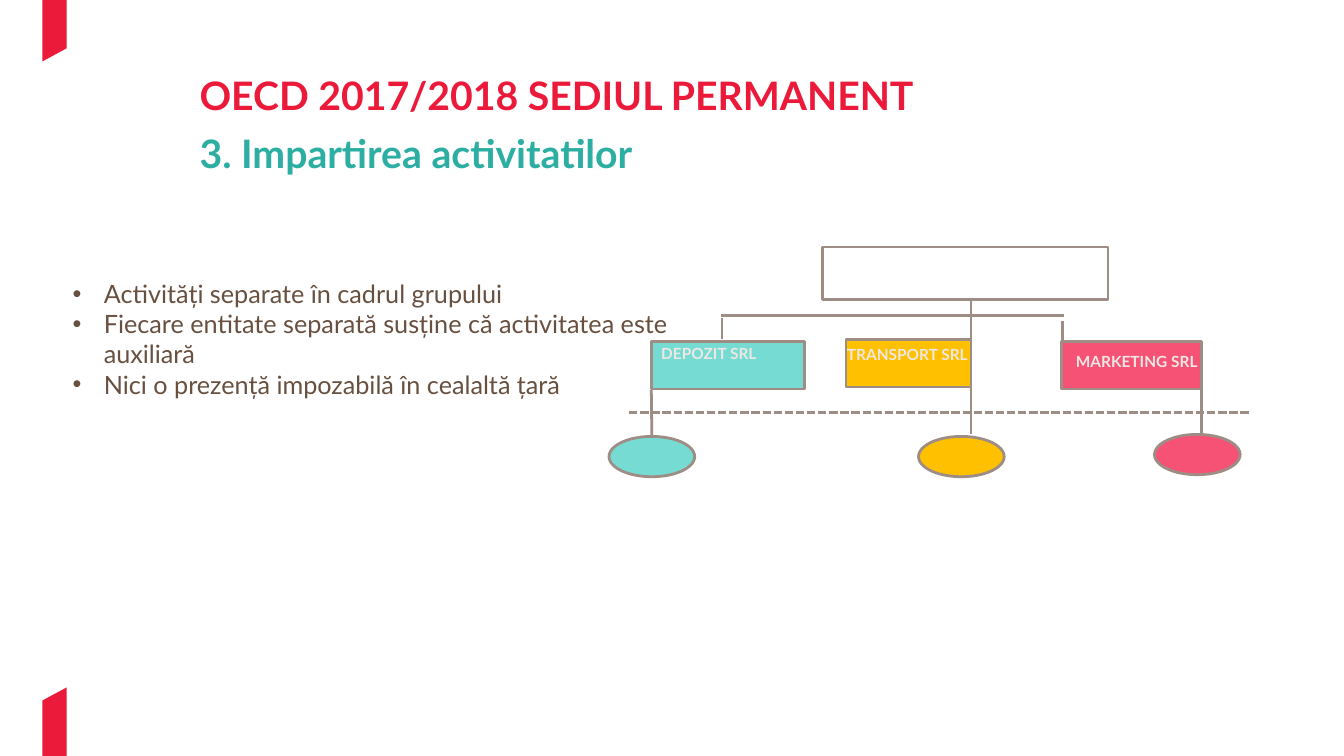
from pptx import Presentation
from pptx.dml.color import RGBColor
from pptx.enum.dml import MSO_LINE
from pptx.enum.shapes import MSO_CONNECTOR, MSO_SHAPE
from pptx.enum.text import MSO_ANCHOR, MSO_AUTO_SIZE, PP_ALIGN
from pptx.oxml.ns import qn
from pptx.util import Inches, Pt

RECTANGLE, OVAL = MSO_SHAPE.RECTANGLE, MSO_SHAPE.OVAL
STRAIGHT, DASH = MSO_CONNECTOR.STRAIGHT, MSO_LINE.SQUARE_DOT
TOP, LEFT, NO_FIT = MSO_ANCHOR.TOP, PP_ALIGN.LEFT, MSO_AUTO_SIZE.NONE

COLORS = {
    "red": "EC1A3A",
    "teal": "2DAEA3",
    "brown": "685040",
    "outline": "9D8D85",
    "label": "EDE8E4",
    "aqua": "76DBD2",
    "amber": "FFC000",
    "pink": "F65275",
}
HEADING = {"size": Pt(28), "bold": True}
BODY = {"size": Pt(18), "bold": False}
LABEL = {"size": Pt(11), "bold": True}


def color(name):
    return RGBColor.from_string(COLORS[name])


def add_bullet(paragraph):
    properties = paragraph._p.get_or_add_pPr()
    properties.set("marL", str(Inches(0.33)))
    properties.set("indent", str(Inches(-0.31)))
    properties.append(properties.makeelement(qn("a:buChar"), {"char": "•"}))


class SlideBuilder:
    font_name = "Lato"
    line_width = Pt(1.98)

    def __init__(self, slide):
        self.slide = slide
        self.shapes = slide.shapes

    def set_text(self, shape, lines, style, color_name, inset=(0, 0), bulleted=False):
        """Fill a shape with left-aligned paragraphs; inset is left, top in inches."""
        frame = shape.text_frame
        settings = {
            "word_wrap": True, "auto_size": NO_FIT, "vertical_anchor": TOP,
            "margin_left": Inches(inset[0]), "margin_top": Inches(inset[1]),
            "margin_right": 0, "margin_bottom": 0,
        }
        for key, value in settings.items():
            setattr(frame, key, value)
        frame.text = "\n".join(lines)
        for paragraph in frame.paragraphs:
            if bulleted:
                add_bullet(paragraph)
            paragraph.alignment = LEFT
            paragraph.space_before = Pt(0)
            for key, value in {"name": self.font_name, **style}.items():
                setattr(paragraph.font, key, value)
            paragraph.font.color.rgb = color(color_name)

    def place(self, shape, left, top, width, height):
        shape.left, shape.top = Inches(left), Inches(top)
        shape.width, shape.height = Inches(width), Inches(height)
        return shape

    def title(self, text, *box):
        self.set_text(self.place(self.shapes.title, *box), [text], HEADING, "red")

    def subtitle(self, text, *box):
        textbox = self.shapes.add_textbox(*map(Inches, box))
        self.set_text(textbox, [text], HEADING, "teal")

    def bullets(self, items, *box):
        body = self.place(self.slide.placeholders[1], *box)
        self.set_text(body, items, BODY, "brown", bulleted=True)

    def ribbon(self, points):
        corners = [(Inches(x), Inches(y)) for x, y in points]
        outline = self.shapes.build_freeform(*corners[0])
        outline.add_line_segments(corners[1:], close=True)
        ribbon = outline.convert_to_shape()
        ribbon.shadow.inherit = False
        ribbon.fill.solid()
        ribbon.fill.fore_color.rgb = color("red")
        ribbon.line.fill.background()

    def node(self, kind, box, fill=None):
        node = self.shapes.add_shape(kind, *map(Inches, box))
        node.shadow.inherit = False
        if fill:
            node.fill.solid()
            node.fill.fore_color.rgb = color(fill)
        else:
            node.fill.background()
        node.line.color.rgb = color("outline")
        node.line.width = self.line_width
        return node

    def line(self, x1, y1, x2, y2, dash=None):
        line = self.shapes.add_connector(STRAIGHT, *map(Inches, (x1, y1, x2, y2)))
        line.line.color.rgb = color("outline")
        line.line.width = self.line_width
        if dash:
            line.line.dash_style = dash
        properties = line._element.spPr
        properties.append(properties.makeelement(qn("a:effectLst"), {}))
        return line


def main():
    presentation = Presentation()
    presentation.slide_width = Inches(13.33)
    presentation.slide_height = Inches(7.5)
    layout = presentation.slide_layouts[1]
    builder = SlideBuilder(presentation.slides.add_slide(layout))

    builder.ribbon([(0.66, 0), (0.42, 0), (0.42, 0.61), (0.66, 0.48)])
    builder.ribbon([(0.66, 6.82), (0.42, 6.95), (0.42, 7.5), (0.66, 7.5)])
    builder.title("OECD 2017/2018 SEDIUL PERMANENT", 1.98, 0.71, 10.48, 0.47)
    builder.subtitle("3. Impartirea activitatilor", 1.98, 1.28, 7.72, 0.47)
    builder.bullets([
        "Activități separate în cadrul grupului",
        "Fiecare entitate separată susține că activitatea este auxiliară",
        "Nici o prezență impozabilă în cealaltă țară",
    ], 0.7, 2.76, 6.04, 1.22)

    builder.node(RECTANGLE, (8.16, 2.45, 2.83, 0.52))
    # name, fill, left, top, width, text inset, oval left, oval top
    companies = [
        ("DEPOZIT SRL", "aqua", 6.46, 3.39, 1.52, (0.1, 0.02), 6.04, 4.33),
        ("TRANSPORT SRL", "amber", 8.39, 3.37, 1.24, (0.01, 0.05), 9.11, 4.33),
        ("MARKETING SRL", "pink", 10.53, 3.39, 1.39, (0.14, 0.1), 11.45, 4.31),
    ]
    ovals = []
    for name, fill, left, top, width, inset, oval_left, oval_top in companies:
        company = builder.node(RECTANGLE, (left, top, width, 0.47), fill)
        builder.set_text(company, [name], LABEL, "label", inset)
        ovals.append(builder.node(OVAL, (oval_left, oval_top, 0.85, 0.4), fill))

    builder.line(7.15, 3.13, 10.55, 3.13)
    for x, top, bottom in [(7.16, 3.15, 3.36), (9.63, 2.99, 3.37), (10.54, 3.18, 3.38),
                           (9.63, 3.84, 4.31), (11.92, 3.84, 4.3)]:
        builder.line(x, top, x, bottom)
    builder.line(6.46, 3.87, 6.46, 4.33).end_connect(ovals[0], 0)
    builder.line(6.24, 4.09, 12.41, 4.09, DASH)

    presentation.save("out.pptx")


if __name__ == "__main__":
    main()
